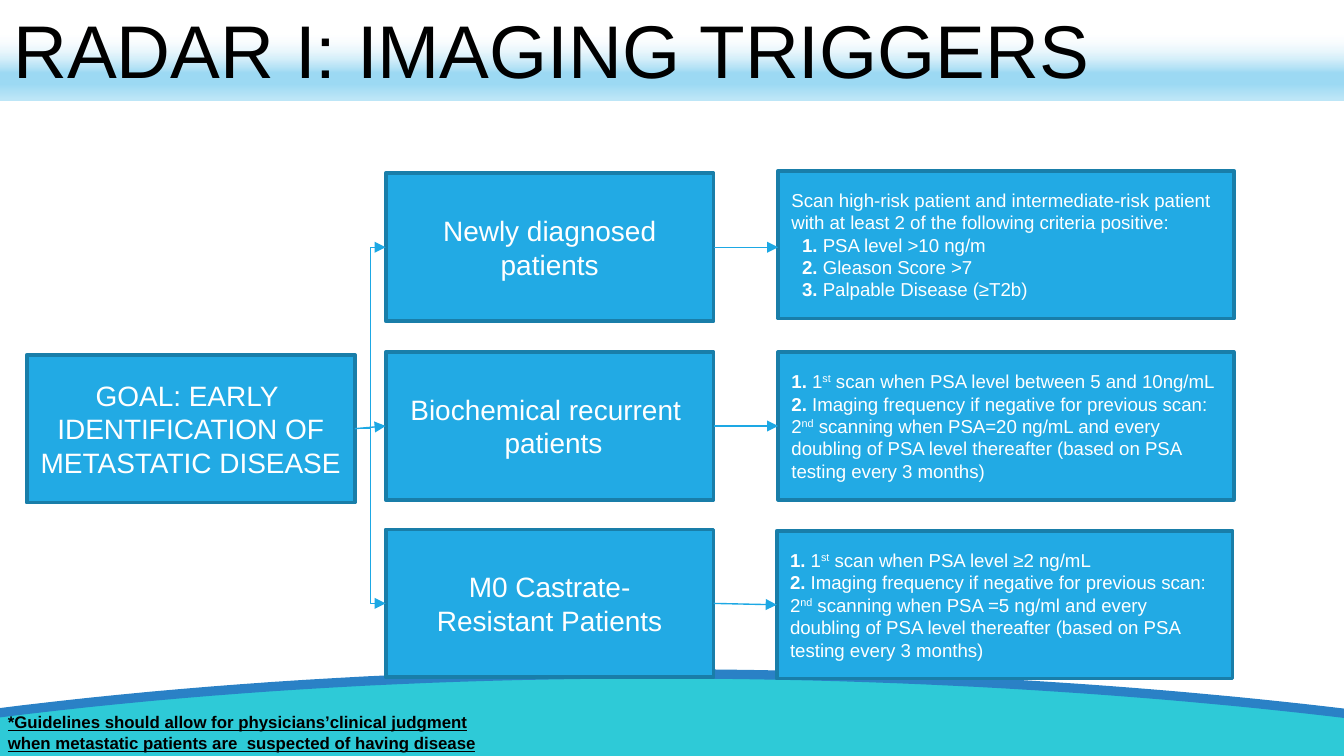
import pptx
import pptx.util
import pptx.dml.color
import pptx.enum.shapes
import pptx.enum.text
import pptx.oxml

Inches = pptx.util.Inches
Pt = pptx.util.Pt
PP_ALIGN = pptx.enum.text.PP_ALIGN
ANCHOR = pptx.enum.text.MSO_ANCHOR
CONNECTOR = pptx.enum.shapes.MSO_CONNECTOR
NS = 'xmlns:a="http://schemas.openxmlformats.org/drawingml/2006/main"'

BOX_H = 1.1
GROUP_W = 2.44
TRIGGER_W = 3.39
GOAL = (0.2, 2.64, ["GOAL: EARLY ", "IDENTIFICATION OF", "METASTATIC DISEASE"])
GROUPS = [
    (2.87, 1.29, ["Newly diagnosed", "patients"]),
    (2.87, 2.62, ["Biochemical recurrent ", " patients"]),
    (2.87, 3.94, ["M0 Castrate-", "Resistant Patients"]),
]


def scan_rules(first, second):
    return [
        (0, [("1. ", "b"), ("1", ""), ("st", "sup"), (" scan when PSA level " + first, "")]),
        (0, [("2. ", "b"), ("Imaging frequency if negative for previous scan: 2", ""),
             ("nd", "sup"), (" scanning when " + second + " and every ", ""), ("\n", ""),
             ("doubling of PSA level thereafter (based on PSA testing every 3 months)", "")]),
    ]


CRITERIA = ["PSA level >10 ng/m", "Gleason Score >7", "Palpable Disease (≥T2b)"]
TRIGGERS = [
    (5.79, 1.27, [(0, [("Scan high-risk patient and intermediate-risk patient with at least 2 "
                        "of the following criteria positive:", "")])]
     + [(0.08, [(f"{n}.", "b"), (" " + c, "")]) for n, c in enumerate(CRITERIA, 1)]),
    (5.79, 2.62, scan_rules("between 5 and 10ng/mL", "PSA=20 ng/mL")),
    (5.78, 3.95, scan_rules("≥2 ng/mL", "PSA =5 ng/ml")),
]
GOAL_ARROW_Y = 3.19
ARROWS = [
    (CONNECTOR.ELBOW, 1.84, 1.84),
    (CONNECTOR.STRAIGHT, 3.17, 3.17),
    (CONNECTOR.ELBOW, 4.49, 4.5),
]


def rgb(value):
    return pptx.dml.color.RGBColor.from_string(value)


def format_font(font, color, **values):
    for name, value in {"name": "Arial", **values}.items():
        setattr(font, name, value)
    font.color.rgb = rgb(color)


def bezier(p0, p1, p2, p3, steps=48):
    points = []
    for i in range(steps + 1):
        t = i / steps
        weights = ((1 - t) ** 3, 3 * t * (1 - t) ** 2, 3 * t * t * (1 - t), t ** 3)
        points.append(tuple(Inches(sum(w * p[axis] for w, p in zip(weights, (p0, p1, p2, p3))))
                            for axis in (0, 1)))
    return points


def add_outline(s, points, close):
    builder = s.shapes.build_freeform(*points[0], scale=1.0)
    builder.add_line_segments(points[1:], close=close)
    sp = builder.convert_to_shape()
    sp.shadow.inherit = False
    return sp


def add_wave(s, bottom):
    curve = bezier((-0.04, 5.32), (3.64, 4.87), (6.93, 4.98), (10, 5.31))
    corners = [(Inches(10), Inches(bottom)), (Inches(-0.04), Inches(bottom))]
    sea = add_outline(s, curve + corners, True)
    sea.fill.solid()
    sea.fill.fore_color.rgb = rgb("2ECAD7")
    sea.line.fill.background()
    crest = add_outline(s, bezier((-0.05, 5.31), (3.66, 4.84), (7.43, 5), (10.02, 5.31)), False)
    crest.fill.background()
    crest.line.color.rgb = rgb("2A81C6")
    crest.line.width = Pt(5)


def add_title(s, x, y, w, h):
    sp = s.shapes.title
    for name, value in {"left": x, "top": y, "width": w, "height": h}.items():
        setattr(sp, name, Inches(value))
    sp.fill.gradient()
    sp.fill.gradient_angle = 270
    stops = sp.element.spPr.find(".//" + pptx.oxml.ns.qn("a:gsLst"))
    for old in list(stops):
        stops.remove(old)
    for pos, color, alpha in ((35, "F4FBFE", 0), (73, "9CD9F3", 100),
                              (83, "9CD9F3", 100), (97, "BDE6F7", 100)):
        stops.append(pptx.oxml.parse_xml(
            f'<a:gs {NS} pos="{pos * 1000}"><a:srgbClr val="{color}">'
            f'<a:alpha val="{alpha * 1000}"/></a:srgbClr></a:gs>'))
    tf = sp.text_frame
    tf.text = "RADAR I: IMAGING TRIGGERS"
    tf.vertical_anchor = ANCHOR.TOP
    tf.auto_size = pptx.enum.text.MSO_AUTO_SIZE.NONE
    p = tf.paragraphs[0]
    p.alignment = PP_ALIGN.LEFT
    format_font(p.runs[0].font, "000000", size=Pt(40))


def add_footnote(s, x, y, w, h):
    tf = s.shapes.add_textbox(*map(Inches, (x, y, w, h))).text_frame
    tf.word_wrap = True
    r = tf.paragraphs[0].add_run()
    r.text = ("*Guidelines should allow for physicians’clinical judgment "
              "when metastatic patients are  suspected of having disease")
    format_font(r.font, "000000", size=Pt(9), bold=True, underline=True)


def add_box(s, x, y, w, paragraphs, size, align):
    sp = s.shapes.add_shape(pptx.enum.shapes.MSO_SHAPE.RECTANGLE,
                            *map(Inches, (x, y, w, BOX_H)))
    sp.shadow.inherit = False
    sp.fill.solid()
    sp.fill.fore_color.rgb = rgb("22AAE4")
    sp.line.color.rgb = rgb("197EA9")
    sp.line.width = Pt(2)
    tf = sp.text_frame
    tf.word_wrap = True
    tf.vertical_anchor = ANCHOR.MIDDLE
    for i, (indent, runs) in enumerate(paragraphs):
        p = tf.add_paragraph() if i else tf.paragraphs[0]
        p.alignment = align
        if indent:
            p._p.get_or_add_pPr().set("marL", str(Inches(indent)))
        for text, style in runs:
            if text == "\n":
                p.add_line_break()
                continue
            r = p.add_run()
            r.text = text
            format_font(r.font, "FFFFFF", size=Pt(size), bold=style == "b")
            if style == "sup":
                r.font._element.set("baseline", "30000")


def add_heading_box(s, x, y, lines):
    add_box(s, x, y, GROUP_W, [(0, [(line, "")]) for line in lines], 15, PP_ALIGN.CENTER)


def add_arrow(s, kind, x1, y1, x2, y2):
    c = s.shapes.add_connector(kind, *map(Inches, (x1, y1, x2, y2)))
    c.line.color.rgb = rgb("1DA8E4")
    c.line.width = Pt(0.75)
    c.line._get_or_add_ln().append(pptx.oxml.parse_xml(f'<a:tailEnd {NS} type="triangle"/>'))
    c._element.spPr.append(pptx.oxml.parse_xml(f"<a:effectLst {NS}/>"))


def add_flow(s):
    add_heading_box(s, *GOAL)
    for group in GROUPS:
        add_heading_box(s, *group)
    for x, y, paragraphs in TRIGGERS:
        add_box(s, x, y, TRIGGER_W, paragraphs, 10, PP_ALIGN.LEFT)
    for (kind, group_y, trigger_y), group, trigger in zip(ARROWS, GROUPS, TRIGGERS):
        add_arrow(s, kind, GOAL[0] + GROUP_W, GOAL_ARROW_Y, group[0], group_y)
        add_arrow(s, CONNECTOR.STRAIGHT, group[0] + GROUP_W, group_y, trigger[0], trigger_y)


def main():
    prs = pptx.Presentation()
    prs.slide_width, prs.slide_height = Inches(10), Pt(405)
    s = prs.slides.add_slide(prs.slide_layouts[5])
    add_wave(s, 5.65)
    add_title(s, 0, -0.02, 10, 0.77)
    add_footnote(s, -0.04, 5.25, 3.7, 0.56)
    add_flow(s)
    prs.save("out.pptx")


if __name__ == "__main__":
    main()
